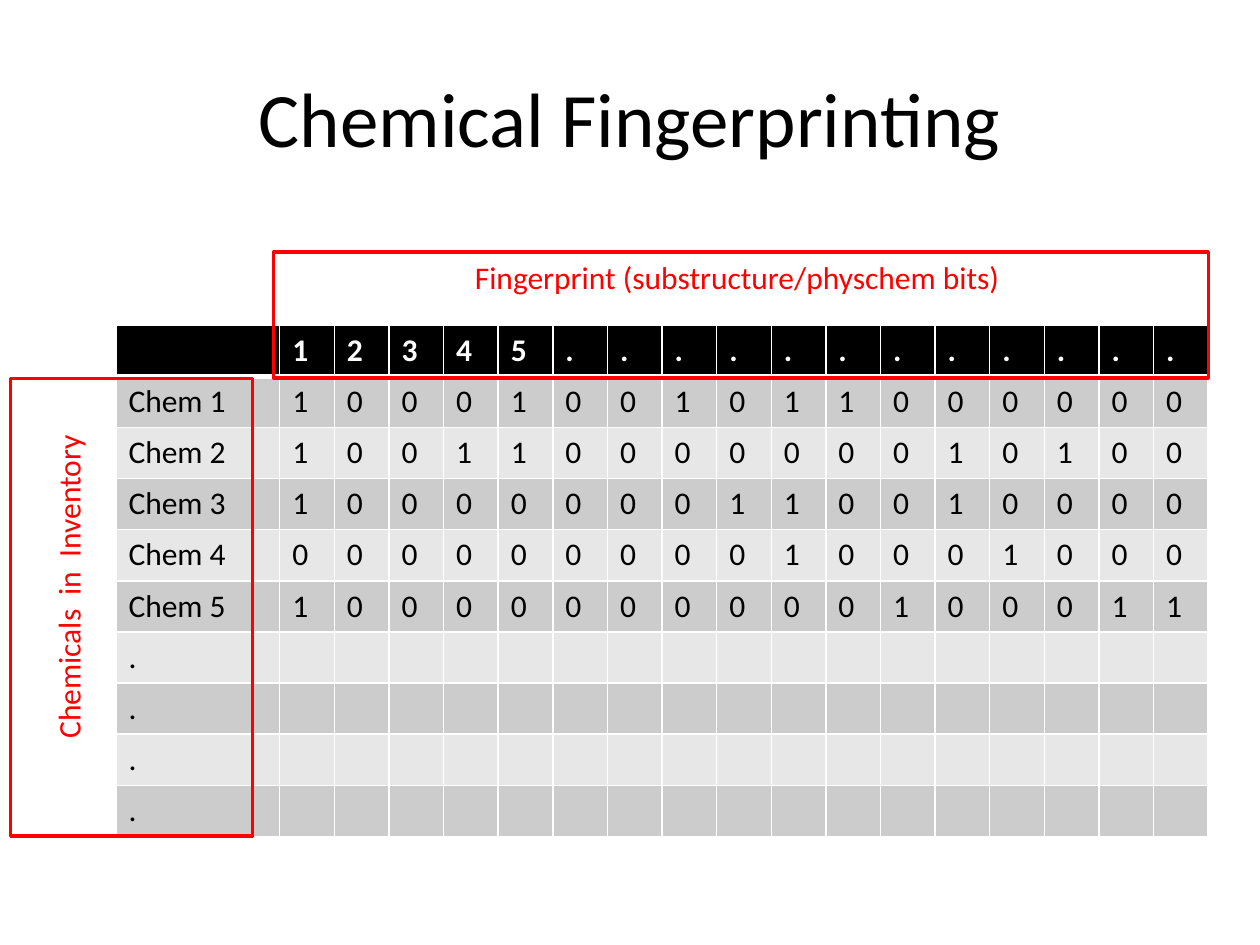
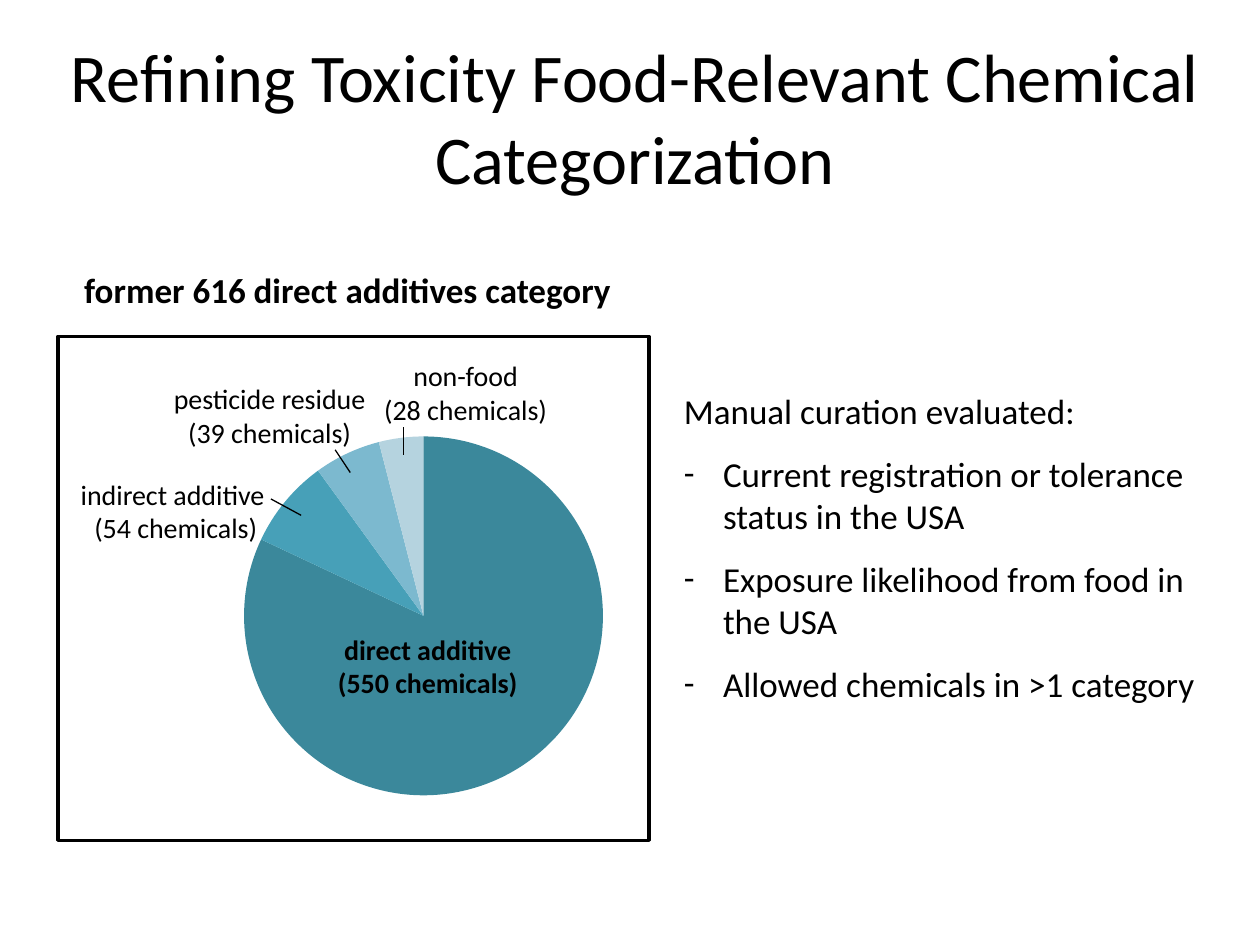
from lxml.etree import SubElement
from pptx import Presentation
from pptx.chart.data import CategoryChartData
from pptx.dml.color import RGBColor
from pptx.enum.chart import XL_CHART_TYPE
from pptx.enum.shapes import MSO_CONNECTOR, MSO_SHAPE
from pptx.enum.text import MSO_ANCHOR, MSO_AUTO_SIZE, PP_ALIGN
from pptx.oxml import parse_xml
from pptx.oxml.ns import nsdecls, qn
from pptx.util import Inches, Pt

COLORS = {
    "text": "000000", "paper": "FFFFFF", "mark": "FF0000",
    "band_dark": "CCCCCC", "band_light": "E7E7E7",
    "direct": "3B889B", "indirect": "47A0B8", "pesticide": "7CB9CF", "non_food": "B5D3DF",
}
FONT = "Calibri"
COLS, ROWS = 100, 75
CENTER = PP_ALIGN.CENTER


def rgb(name):
    return RGBColor.from_string(COLORS[name])


def format_font(font, size=18, color="text", bold=False):
    font.name, font.size, font.bold = FONT, Pt(size), bold
    font.color.rgb = rgb(color)


def write(p, text, align=None, after=None, bullet=None, **font):
    r = p.add_run()
    r.text = text
    format_font(r.font, **font)
    if align is not None:
        p.alignment = align
    if after is not None:
        p.space_after = Pt(after)
    if bullet:
        pPr = p._p.get_or_add_pPr()
        pPr.set("marL", str(Inches(0.31)))
        pPr.set("indent", str(-Inches(0.31)))
        SubElement(pPr, qn("a:buFont")).set("typeface", FONT)
        SubElement(pPr, qn("a:buChar")).set("char", bullet)


def set_borders(cell, bottom=1):
    tcPr = cell._tc.get_or_add_tcPr()
    for side, width in (("L", 1), ("R", 1), ("T", 1), ("B", bottom)):
        tcPr.append(parse_xml(
            f'<a:ln{side} {nsdecls("a")} w="{Pt(width)}"><a:solidFill>'
            f'<a:srgbClr val="{COLORS["paper"]}"/></a:solidFill></a:ln{side}>'))


class Deck:
    """Places elements on the current slide; lengths are columns and rows of a 100 x 75 grid."""

    def __init__(self):
        self.prs = Presentation()
        self.prs.slide_width, self.prs.slide_height = Inches(10), Inches(7.5)
        self.s = None

    def x(self, cols):
        return round(self.prs.slide_width * cols / COLS)

    def y(self, rows):
        return round(self.prs.slide_height * rows / ROWS)

    def box(self, left, top, width, height):
        return self.x(left), self.y(top), self.x(width), self.y(height)

    def new_slide(self):
        self.s = self.prs.slides.add_slide(self.prs.slide_layouts[6])

    def title(self, text, at, size):
        tf = self.text([text], at, wrap=True, grow=False, size=size, align=CENTER)
        tf.vertical_anchor = MSO_ANCHOR.MIDDLE

    def text(self, lines, at, wrap=False, grow=True, rotation=0, **style):
        """Write one paragraph per line; a line may be a (text, overrides) pair."""
        sp = self.s.shapes.add_textbox(*self.box(*at))
        sp.rotation = rotation
        tf = sp.text_frame
        tf.word_wrap = wrap
        tf.auto_size = MSO_AUTO_SIZE.SHAPE_TO_FIT_TEXT if grow else MSO_AUTO_SIZE.NONE
        for i, line in enumerate(lines):
            text, extra = (line, {}) if isinstance(line, str) else line
            p = tf.add_paragraph() if i else tf.paragraphs[0]
            write(p, text, **{**style, **extra})
        return tf

    def frame(self, at, color, rotation=0):
        sp = self.s.shapes.add_shape(MSO_SHAPE.RECTANGLE, *self.box(*at))
        sp.shadow.inherit = False
        sp.rotation = rotation
        sp.fill.background()
        sp.line.color.rgb = rgb(color)
        sp.line.width = Pt(2)

    def leader(self, x1, y1, x2, y2):
        line = self.s.shapes.add_connector(
            MSO_CONNECTOR.STRAIGHT, self.x(x1), self.y(y1), self.x(x2), self.y(y2))
        line.line.color.rgb = rgb("text")
        line.line.width = Pt(0.75)
        SubElement(line._element.spPr, qn("a:effectLst"))

    def table(self, rows, at, first_col):
        count = len(rows[0])
        table = self.s.shapes.add_table(len(rows), count, *self.box(*at)).table
        for i, column in enumerate(table.columns):
            column.width = self.x((at[2] - first_col) / (count - 1) if i else first_col)
        for i, values in enumerate(rows):
            table.rows[i].height = self.y(at[3] / len(rows))
            fill = ("band_dark" if i % 2 else "band_light") if i else "text"
            for j, value in enumerate(values):
                cell = table.cell(i, j)
                set_borders(cell, bottom=1 if i else 3)
                cell.fill.solid()
                cell.fill.fore_color.rgb = rgb(fill)
                if value:
                    write(cell.text_frame.paragraphs[0], value,
                          color="text" if i else "paper", bold=not i)

    def pie(self, shares, at, diameter):
        data = CategoryChartData()
        data.categories = [str(i + 1) for i in range(len(shares))]
        data.add_series("Series 1", list(shares.values()))
        chart = self.s.shapes.add_chart(XL_CHART_TYPE.PIE, *self.box(*at), data).chart
        chart.has_legend = chart.has_title = False
        format_font(chart.font)
        plot = chart.plots[0]
        plot.vary_by_categories = True
        for i, name in enumerate(shares):
            fill = plot.series[0].points[i].format.fill
            fill.solid()
            fill.fore_color.rgb = rgb(name)
        w, h = diameter / at[2], diameter / at[3]
        place = {"x": (1 - w) / 2, "y": (1 - h) / 2, "w": w, "h": h}
        area = chart._chartSpace.chart.plotArea
        for old in area.findall(qn("c:layout")):
            area.remove(old)
        values = "".join(f'<c:{k} val="{v:.3f}"/>' for k, v in place.items())
        area.insert(0, parse_xml(
            f'<c:layout {nsdecls("c")}><c:manualLayout><c:layoutTarget val="inner"/>'
            f'<c:xMode val="edge"/><c:yMode val="edge"/>{values}</c:manualLayout></c:layout>'))


def fingerprint_slide(deck):
    deck.new_slide()
    deck.title("Chemical Fingerprinting", (5, 3, 90, 12.5), size=44)
    bits = ["10001001011000000", "10011000000010100", "10000000110010000",
            "00000000010001000", "10000000000100011"]
    rows = [["", *"12345", *"." * 12]]
    rows += [[f"Chem {i}", *row] for i, row in enumerate(bits, 1)]
    rows += [["."] + [""] * 17 for _ in range(4)]
    deck.table(rows, (9.2, 25.8, 86.7, 40.6), first_col=13)
    deck.frame((21.7, 20, 74.2, 10), "mark")
    deck.text(["Fingerprint (substructure/physchem bits)"], (36.7, 20, 44.1, 4), color="mark")
    deck.frame((-7.7, 38.6, 36.3, 19.2), "mark", rotation=270)
    deck.text(["Chemicals  in  Inventory"], (-7.8, 44.4, 26.4, 4), color="mark", rotation=270)


def category_slide(deck):
    deck.new_slide()
    deck.title("Refining Toxicity Food-Relevant Chemical Categorization",
               (3.3, 3, 94.2, 12.5), size=39)
    deck.frame((4.6, 26.7, 46.9, 40), "text")
    deck.pie({"direct": 82, "indirect": 8, "pesticide": 6, "non_food": 4},
             (0.6, 33.3, 66.1, 31.2), diameter=28.5)
    for name, count, left, top, width, bold in (
            ("indirect additive ", 54, 5.3, 37.4, 17.3, False),
            ("direct additive", 550, 25.7, 49.7, 16.5, True),
            ("pesticide residue", 39, 12.7, 29.8, 17.4, False),
            ("non-food", 28, 29.4, 28, 15.1, False)):
        deck.text([name, f"({count} chemicals)"], (left, top, width, 6.4),
                  size=16, bold=bold, align=CENTER)
    for ends in ((21.5, 39.6, 23.9, 40.9), (26.6, 35.7, 27.8, 37.5), (32, 33.9, 32, 36.1)):
        deck.leader(*ends)
    deck.text(["former 616 direct additives category"], (5.7, 20.8, 44.2, 4.4),
              size=20, bold=True)
    criteria = ["Current registration or tolerance status in the USA",
                "Exposure likelihood from food in the USA",
                "Allowed chemicals in >1 category"]
    deck.text(["Manual curation evaluated:"] + [(c, {"bullet": "-"}) for c in criteria],
              (53.3, 30.4, 44.2, 26.3), wrap=True, size=20, after=12)


def main():
    deck = Deck()
    fingerprint_slide(deck)
    category_slide(deck)
    deck.prs.save("out.pptx")


if __name__ == "__main__":
    main()
